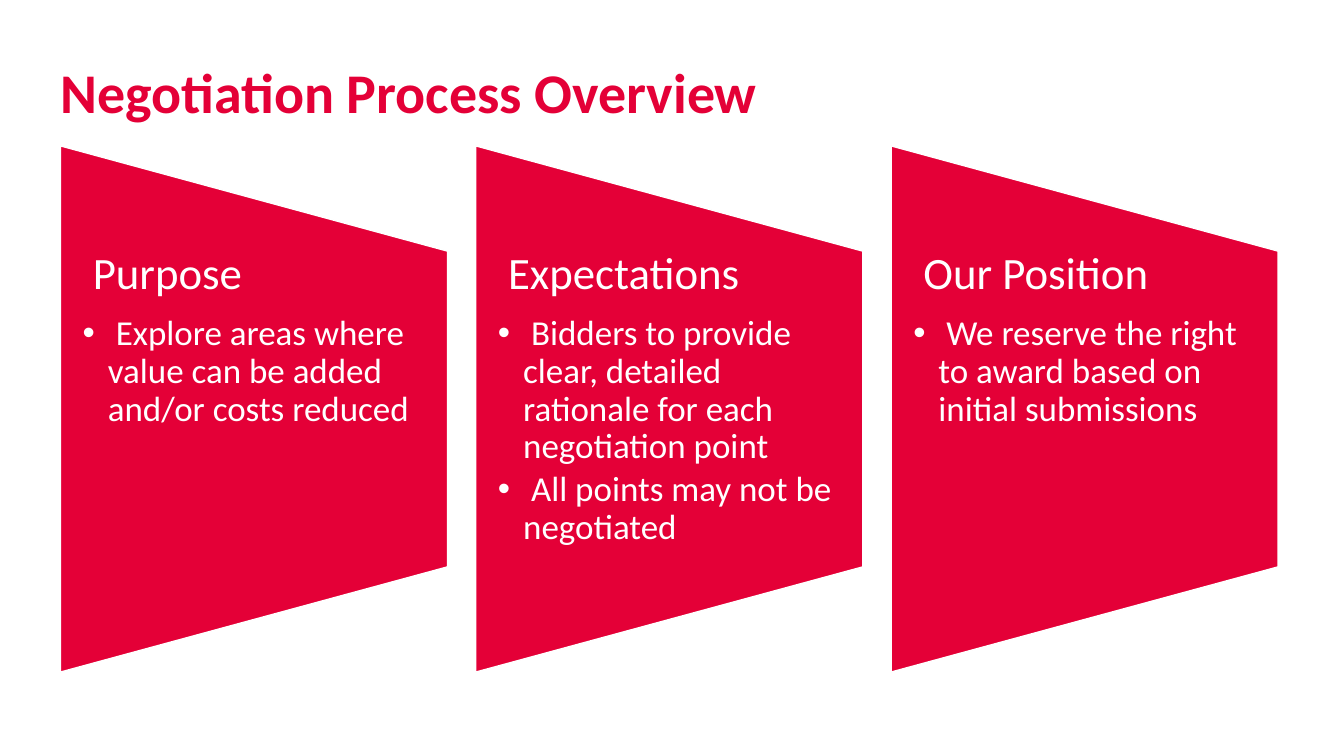
from dataclasses import dataclass

import pptx
import pptx.dml.color
import pptx.enum.shapes
import pptx.enum.text
import pptx.oxml
import pptx.oxml.ns
import pptx.util
from pptx.shapes.base import BaseShape
from pptx.slide import Slide
from pptx.text.text import TextFrame

RED = pptx.dml.color.RGBColor(0xE4, 0x00, 0x37)
WHITE = pptx.dml.color.RGBColor(0xFF, 0xFF, 0xFF)
FONT = "Calibri"

SLIDE_WIDTH = pptx.util.Inches(13.33)
SLIDE_HEIGHT = pptx.util.Inches(7.5)

# Column grid, in percent of the slide's width or height
MARGIN = 4.5
COLUMN_WIDTH = 28.8
COLUMN_PITCH = 30.9
PANEL_TOP = 19.3
PANEL_HEIGHT = 69.6
BODY_HEIGHT = PANEL_HEIGHT * 0.6


@dataclass(frozen=True)
class Panel:
    heading: str
    points: tuple[str, ...]


PANELS = (
    Panel(" Purpose", (" Explore areas where value can be added and/or costs reduced",)),
    Panel(
        " Expectations",
        (
            " Bidders to provide clear, detailed rationale for each negotiation point",
            " All points may not be negotiated",
        ),
    ),
    Panel(" Our Position", (" We reserve the right to award based on initial submissions",)),
)


def across(percent: float) -> int:
    return round(SLIDE_WIDTH * percent / 100)


def down(percent: float) -> int:
    return round(SLIDE_HEIGHT * percent / 100)


def add_text_frame(slide: Slide, left: float, top: float, width: float, height: float,
                   left_inset: float = 0, right_inset: float = 0) -> TextFrame:
    box = slide.shapes.add_textbox(across(left), down(top), across(width), down(height))
    frame = box.text_frame
    frame.word_wrap = True
    frame.vertical_anchor = pptx.enum.text.MSO_ANCHOR.TOP
    frame.margin_left = pptx.util.Inches(left_inset)
    frame.margin_right = pptx.util.Inches(right_inset)
    frame.margin_top = frame.margin_bottom = 0
    return frame


def write(frame: TextFrame, text: str, *, size: float, color: pptx.dml.color.RGBColor,
          bold: bool = False, bullet: bool = False, line_spacing: float = 1.0,
          space_after: float = 0) -> None:
    """Fill the empty first paragraph, or append a new one."""
    paragraph = frame.paragraphs[0] if not frame.text else frame.add_paragraph()
    paragraph.line_spacing = line_spacing
    paragraph.space_after = pptx.util.Pt(space_after)
    if bullet:
        paragraph.level = 1
        properties = paragraph._p.get_or_add_pPr()
        indent = pptx.util.Inches(0.25)
        properties.set("marL", str(indent))
        properties.set("indent", str(-indent))
        namespace = pptx.oxml.ns.nsdecls("a")
        properties.append(pptx.oxml.parse_xml(f'<a:buFont {namespace} typeface="Arial"/>'))
        properties.append(pptx.oxml.parse_xml(f'<a:buChar {namespace} char="•"/>'))
    run = paragraph.add_run()
    run.text = text
    run.font.name = FONT
    run.font.size = pptx.util.Pt(size)
    run.font.bold = bold
    run.font.color.rgb = color


def add_trapezoid(slide: Slide, left: float) -> BaseShape:
    """Turn the shape a quarter left about its centre, so its wide side faces left."""
    width, height = down(PANEL_HEIGHT), across(COLUMN_WIDTH)
    center_x = across(left + COLUMN_WIDTH / 2)
    center_y = down(PANEL_TOP + PANEL_HEIGHT / 2)
    shape = slide.shapes.add_shape(
        pptx.enum.shapes.MSO_SHAPE.FLOWCHART_MANUAL_OPERATION,
        center_x - width // 2, center_y - height // 2, width, height)
    shape.rotation = 270
    shape.shadow.inherit = False
    shape.fill.solid()
    shape.fill.fore_color.rgb = RED
    shape.line.color.rgb = WHITE
    shape.line.width = pptx.util.Pt(1)
    return shape


def add_panel(slide: Slide, panel: Panel, column: int) -> None:
    left = MARGIN + column * COLUMN_PITCH
    add_trapezoid(slide, left)
    body_top = PANEL_TOP + (PANEL_HEIGHT - BODY_HEIGHT) / 2
    frame = add_text_frame(slide, left, body_top, COLUMN_WIDTH, BODY_HEIGHT,
                           left_inset=0.22, right_inset=0.23)
    write(frame, panel.heading, size=32, color=WHITE, line_spacing=0.9, space_after=11.2)
    for point in panel.points:
        write(frame, point, size=25, color=WHITE, bullet=True,
              line_spacing=0.9, space_after=3.75)


def main() -> None:
    presentation = pptx.Presentation()
    presentation.slide_width = SLIDE_WIDTH
    presentation.slide_height = SLIDE_HEIGHT
    slide = presentation.slides.add_slide(presentation.slide_layouts[6])

    # Title
    title = add_text_frame(slide, MARGIN, 7.6, 60.8, 15.5)
    write(title, "Negotiation Process Overview", size=40, color=RED, bold=True)

    # Three panels
    for column, panel in enumerate(PANELS):
        add_panel(slide, panel, column)

    presentation.save("out.pptx")


if __name__ == "__main__":
    main()
